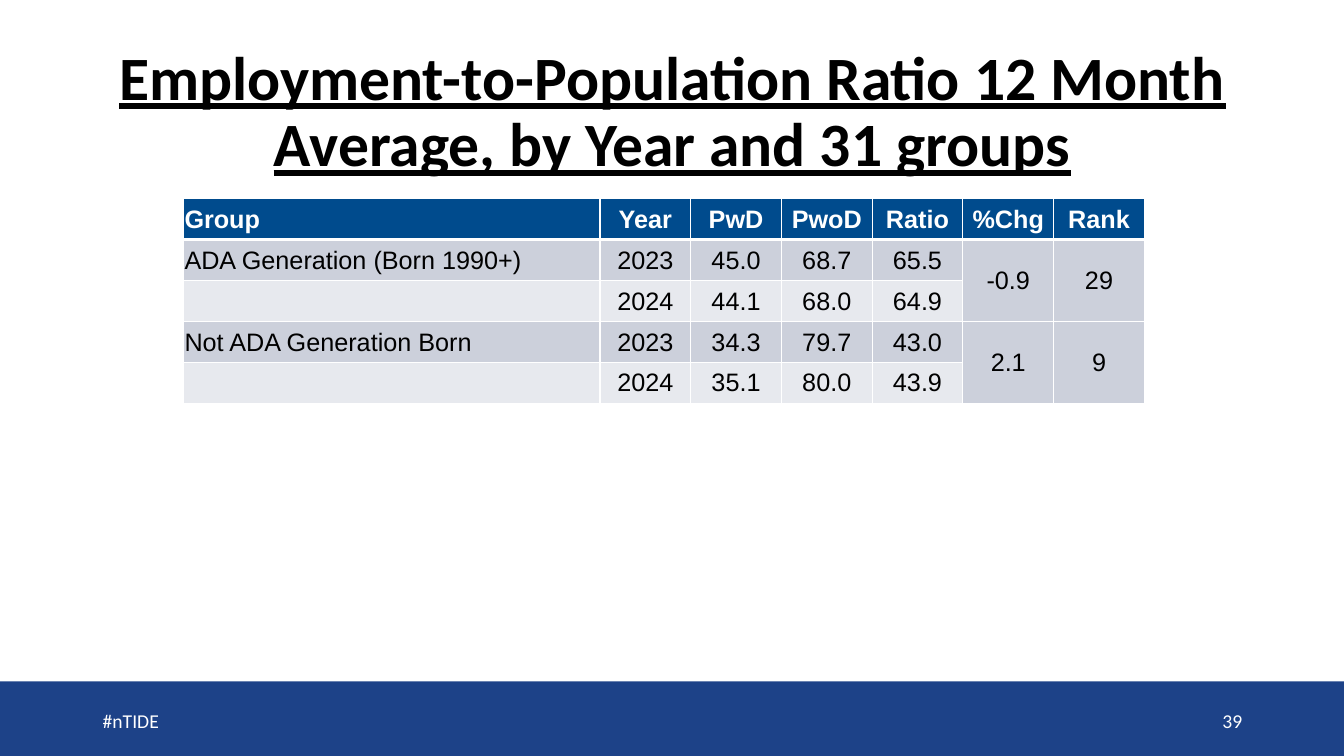
import lxml.etree
import pptx
import pptx.dml.color
import pptx.enum.shapes
import pptx.enum.text
import pptx.oxml.ns
import pptx.util

Inches = pptx.util.Inches
Pt = pptx.util.Pt
ALIGN = pptx.enum.text.PP_ALIGN
MIDDLE = pptx.enum.text.MSO_ANCHOR.MIDDLE

COLORS = {
    "white": "FFFFFF",
    "black": "000000",
    "footer": "1D4288",
    "header": "004B8D",
    "band_dark": "CCD0DB",
    "band_light": "E7E9EE",
}
TITLE = {"name": "Calibri", "size": Pt(44), "bold": True, "underline": True}
FOOTER = {"name": "Calibri", "size": Pt(14)}
HEADER = {"name": "Arial", "size": Pt(18), "bold": True}
BODY = {"name": "Arial", "size": Pt(18), "bold": False}
MARGINS = {
    "margin_left": Inches(0.01),
    "margin_top": Inches(0.01),
    "margin_right": Inches(0.01),
    "margin_bottom": 0,
    "vertical_anchor": MIDDLE,
}
ROWS = [
    ["Group", "Year", "PwD", "PwoD", "Ratio", "%Chg", "Rank"],
    ["ADA Generation (Born 1990+)", "2023", "45.0", "68.7", "65.5", "-0.9", "29"],
    ["", "2024", "44.1", "68.0", "64.9", "", ""],
    ["Not ADA Generation Born", "2023", "34.3", "79.7", "43.0", "2.1", "9"],
    ["", "2024", "35.1", "80.0", "43.9", "", ""],
]


def rgb(color):
    return pptx.dml.color.RGBColor.from_string(COLORS[color])


def apply(target, values):
    for name, value in values.items():
        setattr(target, name, value)


class Deck:
    def __init__(self, width, height):
        self.prs = pptx.Presentation()
        self.prs.slide_width = Inches(width)
        self.prs.slide_height = Inches(height)
        self.s = self.prs.slides.add_slide(self.prs.slide_layouts[6])

    def bar(self, box, color):
        shape = pptx.enum.shapes.MSO_SHAPE.RECTANGLE
        sp = self.s.shapes.add_shape(shape, *map(Inches, box))
        sp.shadow.inherit = False
        sp.fill.solid()
        sp.fill.fore_color.rgb = rgb(color)
        sp.line.fill.background()

    def run(self, p, text, style, color, align):
        p.alignment = align
        r = p.add_run()
        r.text = text
        apply(r.font, style)
        r.font.color.rgb = rgb(color)

    def text(self, box, text, style, color, align, spacing=1.0):
        tf = self.s.shapes.add_textbox(*map(Inches, box)).text_frame
        apply(tf, {"word_wrap": True, "vertical_anchor": MIDDLE})
        p = tf.paragraphs[0]
        p.line_spacing = spacing
        self.run(p, text, style, color, align)

    def borders(self, cell, widths):
        tc_pr = cell._tc.get_or_add_tcPr()
        qn = pptx.oxml.ns.qn
        for side, width in widths.items():
            ln = lxml.etree.SubElement(tc_pr, qn(f"a:ln{side}"), w=str(Pt(width)))
            fill = lxml.etree.SubElement(ln, qn("a:solidFill"))
            lxml.etree.SubElement(fill, qn("a:srgbClr"), val=COLORS["white"])

    def table(self, box, rows, col_widths, merges):
        frame = self.s.shapes.add_table(len(rows), len(rows[0]), *map(Inches, box))
        table = frame.table
        for column, width in zip(table.columns, col_widths):
            column.width = Inches(width)
        for i, row in enumerate(rows):
            for j, text in enumerate(row):
                cell = table.cell(i, j)
                apply(cell, MARGINS)
                top = 3 if i == 1 else 1
                bottom = 3 if i == 0 else 1
                self.borders(cell, {"L": 1, "R": 1, "T": top, "B": bottom})
                cell.fill.solid()
                band = "band_dark" if i % 2 else "band_light"
                cell.fill.fore_color.rgb = rgb(band if i else "header")
                p = cell.text_frame.paragraphs[0]
                if text:
                    style, color = (BODY, "black") if i else (HEADER, "white")
                    align = ALIGN.CENTER if j else ALIGN.LEFT
                    self.run(p, text, style, color, align)
                else:
                    apply(p.font, BODY)
        for i, j in merges:
            table.cell(i, j).merge(table.cell(i + 1, j))


def main():
    deck = Deck(13.33, 7.5)
    deck.bar((0, 6.76, 13.33, 0.74), "footer")
    deck.text(
        (0.92, 0.4, 11.5, 1.45),
        "Employment-to-Population Ratio 12 Month Average, by Year and 31 groups",
        TITLE, "black", ALIGN.CENTER, 0.9,
    )
    deck.text((0.92, 6.95, 3, 0.4), "#nTIDE", FOOTER, "white", ALIGN.LEFT)
    deck.text((9.42, 6.95, 3, 0.4), "39", FOOTER, "white", ALIGN.RIGHT)
    merges = [(i, j) for i in (1, 3) for j in (5, 6)]
    deck.table((1.82, 1.97, 9.51, 2.03), ROWS, [4.13] + [0.9] * 6, merges)
    deck.prs.save("out.pptx")


if __name__ == "__main__":
    main()
